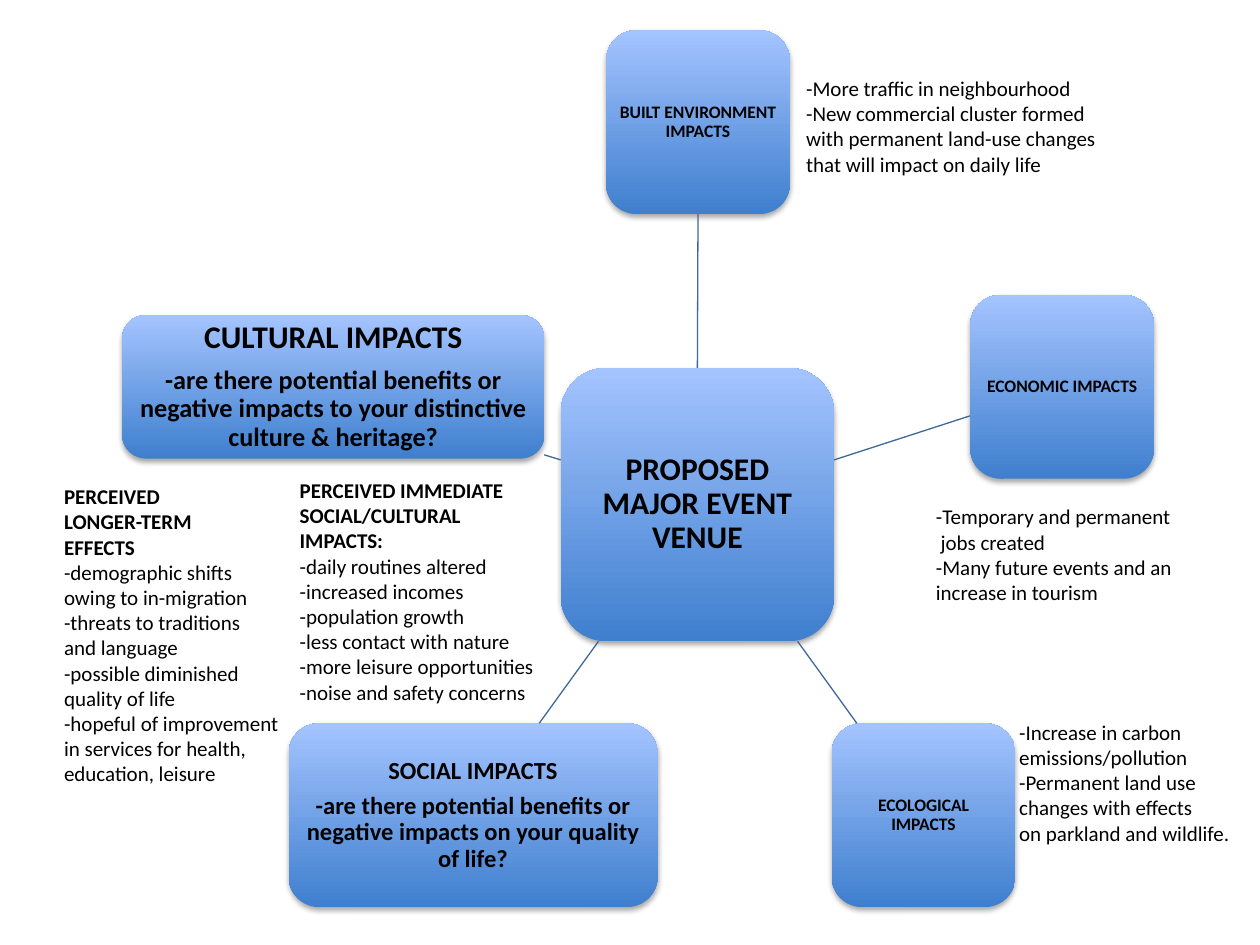
import pptx
import pptx.util
import pptx.dml.color
import pptx.enum.shapes
import pptx.enum.text
import pptx.oxml
import pptx.oxml.ns
from dataclasses import dataclass

Inches = pptx.util.Inches
Pt = pptx.util.Pt


@dataclass(frozen=True)
class Theme:
    font: str = "Calibri"
    text: str = "000000"
    box_bottom: str = "3F7FCE"
    box_top: str = "A4C4FF"
    line: str = "3F6797"
    line_width: float = 0.75
    title: int = 18
    question: int = 15
    social: int = 14
    note: int = 12
    label: int = 10


THEME = Theme()
SATELLITE = 1.46  # side of the small boxes, inches

# name: (left, top, width, height, inset, [(text, size), ...])
BOXES = {
    "venue": (4.45, 2.92, 2.17, 2.17, 0.05,
              [("PROPOSED MAJOR EVENT VENUE", THEME.title)]),
    "built": (4.81, 0.24, SATELLITE, SATELLITE, 0.03,
              [("BUILT ENVIRONMENT IMPACTS", THEME.label)]),
    "economic": (7.7, 2.34, SATELLITE, SATELLITE, 0.03,
                 [("ECONOMIC IMPACTS", THEME.label)]),
    "ecological": (6.6, 5.74, SATELLITE, SATELLITE, 0.03,
                   [("ECOLOGICAL IMPACTS", THEME.label)]),
    "social": (2.29, 5.74, 2.93, SATELLITE, 0.04,
               [("SOCIAL IMPACTS", THEME.social),
                ("-are there potential benefits or negative impacts "
                 "on your quality of life?", THEME.social)]),
    "cultural": (0.97, 2.5, 3.35, 1.14, 0.05,
                 [("CULTURAL IMPACTS", THEME.title),
                  ("-are there potential benefits or negative impacts "
                   "to your distinctive culture & heritage?", THEME.question)]),
}

# Spokes that meet the boxes away from the middle of a side
SPOKES = [
    (6.62, 3.65, 7.7, 3.3),
    (6.33, 5.09, 6.8, 5.74),
    (4.75, 5.09, 4.28, 5.74),
    (4.45, 3.65, 4.32, 3.61),
]

# (left, top, width, height, bold heading lines, plain lines)
NOTES = [
    (6.3, 0.55, 2.73, 0.91, [],
     ["-More traffic in neighbourhood", "-New commercial cluster formed",
      "with permanent land-use changes", "that will impact on daily life"]),
    (7.33, 3.95, 2.23, 0.91, [],
     ["-Temporary and permanent", " jobs created",
      "-Many future events and an", "increase in tourism"]),
    (7.99, 5.66, 2.01, 1.11, [],
     ["-Increase in carbon", "emissions/pollution", "-Permanent land use",
      "changes with effects", "on parkland and wildlife."]),
    (2.28, 3.74, 2.19, 1.92,
     ["PERCEIVED IMMEDIATE", "SOCIAL/CULTURAL", "IMPACTS:"],
     ["-daily routines altered", "-increased incomes", "-population growth",
      "-less contact with nature", "-more leisure opportunities",
      "-noise and safety concerns"]),
    (0.41, 3.79, 2.02, 2.52,
     ["PERCEIVED", "LONGER-TERM", "EFFECTS"],
     ["-demographic shifts", "owing to in-migration", "-threats to traditions",
      "and language", "-possible diminished", "quality of life",
      "-hopeful of improvement", "in services for health,",
      "education, leisure"]),
]


def rgb(value):
    return pptx.dml.color.RGBColor.from_string(value)


def add_paragraph(tf, index, text, size, bold):
    p = tf.paragraphs[0] if index == 0 else tf.add_paragraph()
    r = p.add_run()
    r.text = text
    r.font.name = THEME.font
    r.font.size = Pt(size)
    r.font.bold = bold
    r.font.color.rgb = rgb(THEME.text)
    return p


def add_soft_shadow(sp):
    sp.shadow.inherit = False
    effects = sp._element.spPr.find(pptx.oxml.ns.qn("a:effectLst"))
    effects.append(pptx.oxml.parse_xml(
        f'<a:outerShdw {pptx.oxml.ns.nsdecls("a")} blurRad="40000" dist="23000" '
        'dir="5400000" rotWithShape="0"><a:srgbClr val="000000">'
        '<a:alpha val="35000"/></a:srgbClr></a:outerShdw>'))


def add_box(s, left, top, width, height, inset, lines):
    sp = s.shapes.add_shape(
        pptx.enum.shapes.MSO_SHAPE.ROUNDED_RECTANGLE,
        Inches(left), Inches(top), Inches(width), Inches(height))
    sp.fill.gradient()
    sp.fill.gradient_angle = 90
    for stop, color in zip(sp.fill.gradient_stops,
                           (THEME.box_bottom, THEME.box_top)):
        stop.color.rgb = rgb(color)
    sp.line.fill.background()
    add_soft_shadow(sp)

    tf = sp.text_frame
    tf.word_wrap = True
    tf.vertical_anchor = pptx.enum.text.MSO_ANCHOR.MIDDLE
    tf.margin_left = tf.margin_right = Inches(inset)
    tf.margin_top = tf.margin_bottom = Inches(inset)
    for i, (text, size) in enumerate(lines):
        p = add_paragraph(tf, i, text, size, True)
        p.alignment = pptx.enum.text.PP_ALIGN.CENTER
        p.line_spacing = 0.9
        p.space_after = Pt(round(size * 0.35, 1))
    return sp


def add_spoke(s, x1, y1, x2, y2):
    spoke = s.shapes.add_connector(
        pptx.enum.shapes.MSO_CONNECTOR.STRAIGHT,
        Inches(x1), Inches(y1), Inches(x2), Inches(y2))
    spoke.line.color.rgb = rgb(THEME.line)
    spoke.line.width = Pt(THEME.line_width)
    spoke._element.spPr.append(pptx.oxml.parse_xml(
        f'<a:effectLst {pptx.oxml.ns.nsdecls("a")}/>'))
    return spoke


def add_note(s, left, top, width, height, heading, lines):
    tf = s.shapes.add_textbox(Inches(left), Inches(top),
                              Inches(width), Inches(height)).text_frame
    tf.word_wrap = False
    tf.auto_size = pptx.enum.text.MSO_AUTO_SIZE.SHAPE_TO_FIT_TEXT
    for i, text in enumerate(heading + lines):
        add_paragraph(tf, i, text, THEME.note, i < len(heading))


def main():
    prs = pptx.Presentation()
    prs.slide_width = Inches(10)
    prs.slide_height = Inches(7.5)
    s = prs.slides.add_slide(prs.slide_layouts[6])

    boxes = {name: add_box(s, *box) for name, box in BOXES.items()}
    upright = add_spoke(s, 5.54, 2.92, 5.54, 1.7)
    upright.begin_connect(boxes["venue"], 0)
    upright.end_connect(boxes["built"], 2)
    for spoke in SPOKES:
        add_spoke(s, *spoke)
    for note in NOTES:
        add_note(s, *note)

    prs.save("out.pptx")


if __name__ == "__main__":
    main()
